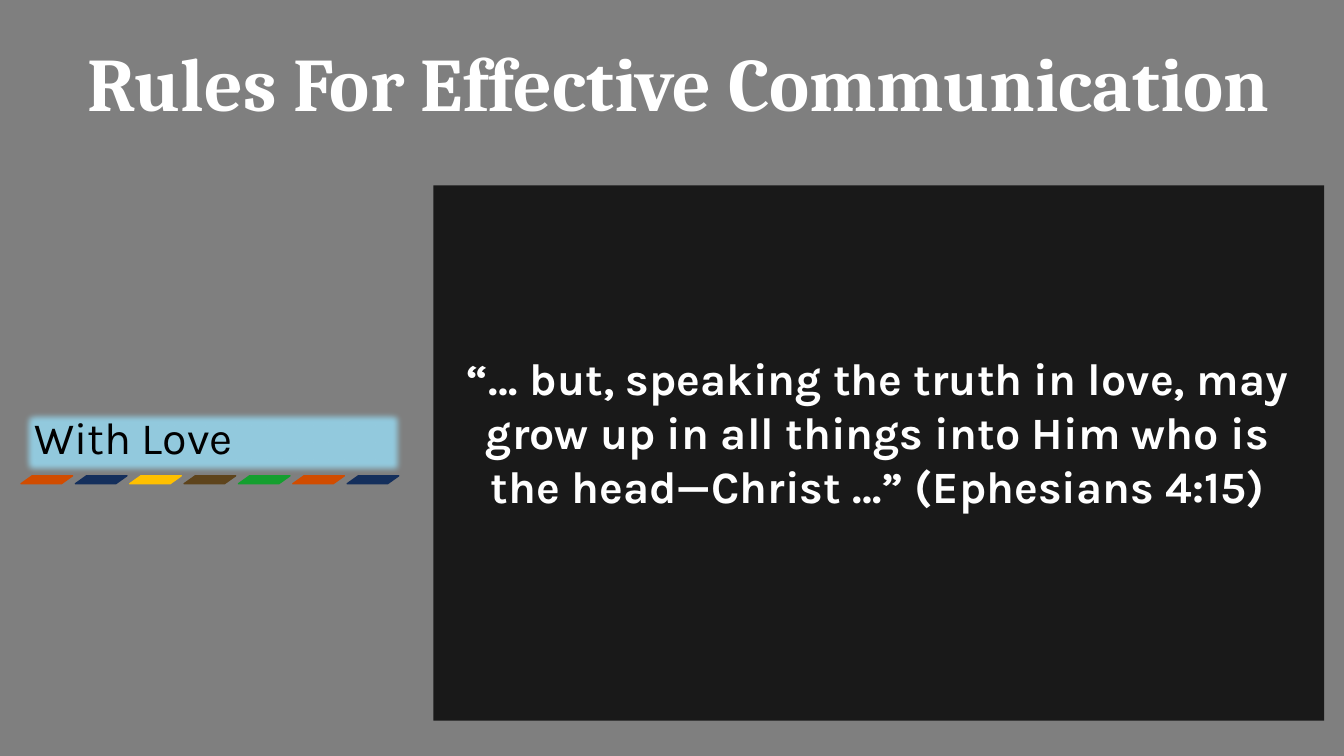
from dataclasses import dataclass
from pptx import Presentation
from pptx.dml.color import RGBColor
from pptx.enum.shapes import MSO_SHAPE
from pptx.enum.text import MSO_ANCHOR, MSO_AUTO_SIZE, PP_ALIGN
from pptx.oxml.ns import qn
from pptx.util import Cm, Pt
from lxml import etree

RECT, SLANT = MSO_SHAPE.RECTANGLE, MSO_SHAPE.PARALLELOGRAM
TOP, BOTTOM = MSO_ANCHOR.TOP, MSO_ANCHOR.BOTTOM
LEFT, CENTER = PP_ALIGN.LEFT, PP_ALIGN.CENTER
FIXED = MSO_AUTO_SIZE.NONE
TITLE_ONLY = 5


@dataclass(frozen=True)
class Theme:
    shade: str = "000000"
    light: str = "FFFFFF"
    dark: str = "000000"
    label: str = "99E4FF"
    bands: tuple = ("D14C00", "142F5C", "FFC000", "5E441C", "149F2F",
                    "D14C00", "142F5C")
    head: str = "Cambria"
    body: str = "Karla"
    big: int = 54
    mid: int = 32


THEME = Theme()


def color(code):
    return RGBColor.from_string(code)


def block(shapes, kind, box, code, alpha=100):
    """Add a filled shape without outline; box is in centimetres."""
    shape = shapes.add_shape(kind, *map(Cm, box))
    shape.shadow.inherit = False
    shape.fill.solid()
    shape.fill.fore_color.rgb = color(code)
    shape.line.fill.background()
    if alpha < 100:
        tint = shape._element.spPr.find(".//" + qn("a:srgbClr"))
        etree.SubElement(tint, qn("a:alpha"), val=str(alpha * 1000))
    return shape


def write(shape, text, frame, para, font, code):
    """Fill a shape with one paragraph, formatted from dicts."""
    body = shape.text_frame
    body.text = text
    line = body.paragraphs[0]
    line.font.color.rgb = color(code)
    frame = {"word_wrap": True, "auto_size": FIXED, **frame}
    for part, values in ((body, frame), (line, para), (line.font, font)):
        for name, value in values.items():
            setattr(part, name, value)


def margins(size):
    sides = ("left", "top", "right", "bottom")
    return {f"margin_{side}": Cm(size) for side in sides}


def add_title(slide, box):
    title = slide.shapes.title
    slide.shapes._spTree.append(title._element)  # bring above the shades
    title.left, title.top, title.width, title.height = map(Cm, box)
    write(title, "Rules For Effective Communication",
          {"vertical_anchor": BOTTOM, **margins(0)},
          {"alignment": CENTER, "line_spacing": 0.9},
          {"name": THEME.head, "size": Pt(THEME.big), "bold": True},
          THEME.light)


def add_quote(slide, box):
    quote = slide.shapes.add_textbox(*map(Cm, box))
    write(quote, "“… but, speaking the truth in love, may grow up in all "
          "things into Him who is the head—Christ …” (Ephesians 4:15)",
          {"vertical_anchor": TOP, "margin_top": Cm(4.14)},
          {"alignment": CENTER},
          {"name": THEME.body, "size": Pt(THEME.mid), "bold": True},
          THEME.light)


def add_label(slide, box):
    left, top, width, height = box
    group = slide.shapes.add_group_shape().shapes

    # Soft-edged plate
    plate = block(group, RECT, box, THEME.label, 75)
    effects = plate._element.spPr.find(qn("a:effectLst"))
    etree.SubElement(effects, qn("a:softEdge"), rad=str(Cm(0.18)))

    # Caption
    text = group.add_textbox(*map(Cm, box))
    write(text, "With Love", {"vertical_anchor": BOTTOM, **margins(0.33)},
          {"alignment": LEFT, "line_spacing": 0.9},
          {"name": THEME.body, "size": Pt(THEME.mid)}, THEME.dark)

    # Row of slanted bands
    step = 1.37
    for i, code in enumerate(THEME.bands):
        spot = (left + i * step, top + height - 0.03, 1.3, 0.2)
        band = block(group, SLANT, spot, code)
        band.adjustments[0] = 1.41
        band.line.color.rgb = color(code)
        band.line.width = Pt(1)


def main():
    deck = Presentation()
    deck.slide_width, deck.slide_height = Cm(33.87), Cm(19.05)
    slide = deck.slides.add_slide(deck.slide_layouts[TITLE_ONLY])

    # Backdrop shades
    block(slide.shapes, RECT, (0, 0, 33.87, 19.05), THEME.shade, 50)
    block(slide.shapes, RECT, (10.92, 4.67, 22.45, 13.49), THEME.shade, 80)

    # Content
    add_title(slide, (0.97, 0.66, 32.26, 2.57))
    add_quote(slide, (11.05, 4.7, 22.15, 13.31))
    add_label(slide, (0.53, 10.29, 9.7, 1.73))
    deck.save("out.pptx")


if __name__ == "__main__":
    main()
